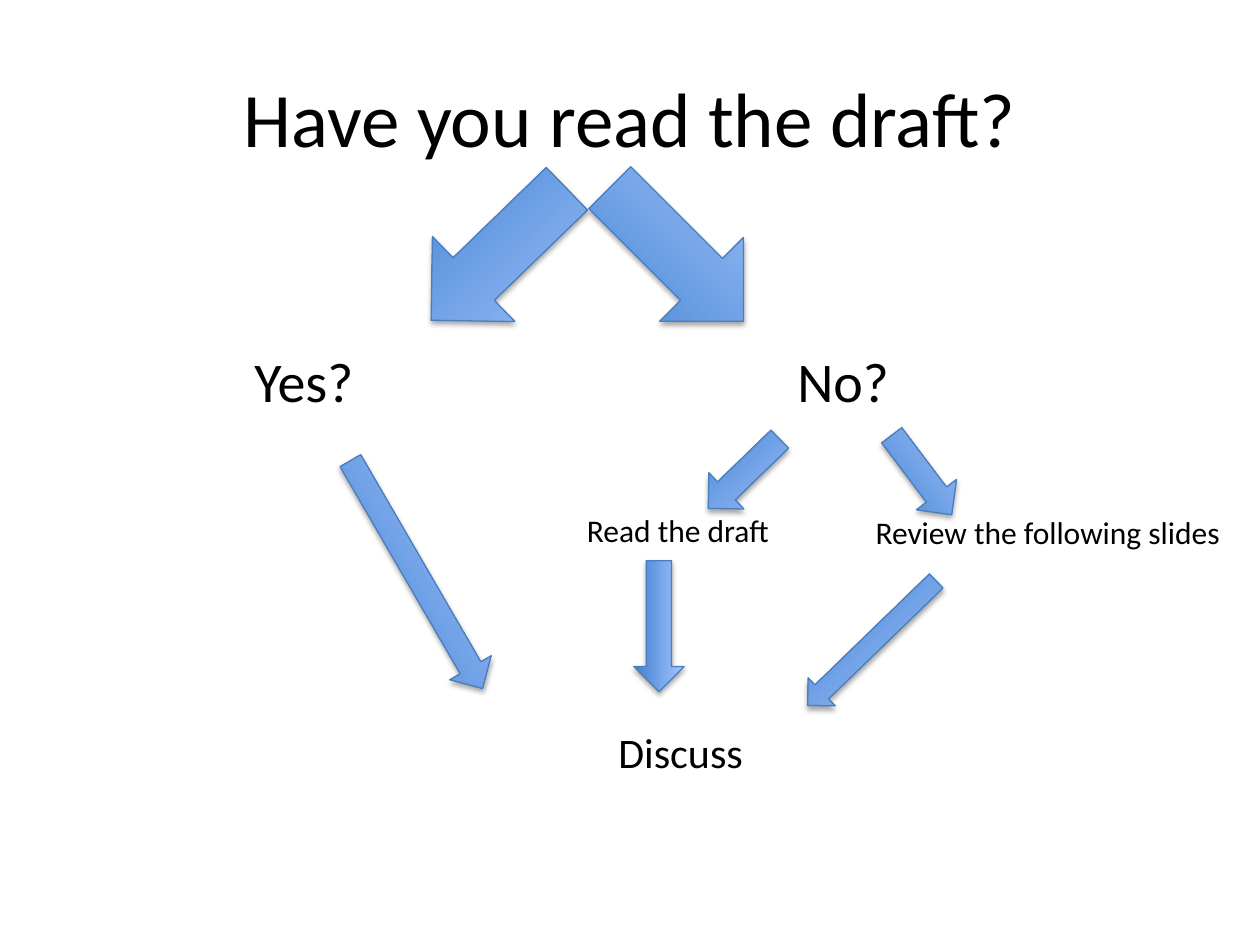
import lxml.etree
import pptx
import pptx.dml.color
import pptx.enum.shapes
import pptx.enum.text
import pptx.oxml
import pptx.oxml.ns
import pptx.util

COLUMNS, ROWS = 100, 75
COLORS = {"text": "000000", "dark": "3F80CE", "light": "A4C4FF",
          "line": "4B7EBC", "shadow": "000000"}
SHADOW = (
    f'<a:effectLst {pptx.oxml.ns.nsdecls("a")}>'
    '<a:outerShdw blurRad="39370" dist="22860" dir="5400000" rotWithShape="0">'
    f'<a:srgbClr val="{COLORS["shadow"]}"><a:alpha val="35000"/></a:srgbClr>'
    '</a:outerShdw></a:effectLst>'
)

prs = pptx.Presentation()
prs.slide_width = pptx.util.Inches(10)
prs.slide_height = pptx.util.Inches(7.5)


def rgb(name):
    """Return the named colour."""
    return pptx.dml.color.RGBColor.from_string(COLORS[name])


def place(box, left, top, width, height):
    """Turn grid units relative to a box into slide lengths."""
    column, row = prs.slide_width / COLUMNS, prs.slide_height / ROWS
    return (round((box[0] + left) * column), round((box[1] + top) * row),
            round(width * column), round(height * row))


def write(tf, text, size=18, align=None, anchor=None, wrap=False):
    """Put one formatted line of text into a frame."""
    tf.word_wrap = wrap
    tf.vertical_anchor = anchor
    p = tf.paragraphs[0]
    p.alignment = align
    r = p.add_run()
    r.text = text
    r.font.name = "Calibri"
    r.font.size = pptx.util.Pt(size)
    r.font.color.rgb = rgb("text")


def label(s, box, at, text, size=18):
    """Add a text box that fits its line."""
    tf = s.shapes.add_textbox(*place(box, *at)).text_frame
    write(tf, text, size=size)
    tf.auto_size = pptx.enum.text.MSO_AUTO_SIZE.SHAPE_TO_FIT_TEXT


def arrow(s, box, at, angle):
    """Add a shaded block arrow turned clockwise by an angle."""
    sp = s.shapes.add_shape(pptx.enum.shapes.MSO_SHAPE.RIGHT_ARROW, *place(box, *at))
    sp.rotation = angle
    sp.fill.gradient()
    sp.fill.gradient_angle = 90
    for stop, name in zip(sp.fill.gradient_stops, ("dark", "light")):
        stop.color.rgb = rgb(name)
    sp.line.color.rgb = rgb("line")
    sp.line.width = pptx.util.Pt(0.75)
    sp._element.spPr.append(pptx.oxml.parse_xml(SHADOW))


def question(s, box):
    """Place the title and the two arrows that lead from it."""
    title = s.shapes.title
    title.left, title.top, title.width, title.height = place(box, 5, 3, 90, 12.5)
    write(title.text_frame, "Have you read the draft?", size=44, wrap=True,
          align=pptx.enum.text.PP_ALIGN.CENTER,
          anchor=pptx.enum.text.MSO_ANCHOR.MIDDLE)
    arrow(s, box, (32.1, 15.5, 15, 9.4), 135.9)
    arrow(s, box, (46.2, 15.5, 15, 9.4), 45)


def yes_branch(s, box):
    """Place the answer yes and its arrow."""
    label(s, box, (0.2, 0, 10.3, 6.4), "Yes?", size=32)
    arrow(s, box, (3.6, 16.7, 20.9, 3.8), 59.9)


def no_branch(s, box):
    """Place the answer no, its two tasks and their arrows."""
    label(s, box, (17.3, 0, 9.4, 6.4), "No?", size=32)
    arrow(s, box, (10.1, 8.6, 7.9, 4), 135.9)
    arrow(s, box, (24.2, 8.7, 7.9, 4), 53)
    label(s, box, (0.6, 13.1, 16.7, 4), "Read the draft")
    label(s, box, (23.5, 13.2, 29.8, 4), "Review the following slides")
    arrow(s, box, (2.1, 20.7, 10.4, 4), 90)
    arrow(s, box, (17.1, 22.5, 14.2, 3.1), 135.9)


def outcome(s, box):
    """Place the step where the branches meet."""
    label(s, box, (0.1, 0.2, 12, 5), "Discuss", size=24)


def main():
    """Build the decision slide and save it."""
    s = prs.slides.add_slide(prs.slide_layouts[5])
    question(s, (0, 0))
    yes_branch(s, (19, 27))
    no_branch(s, (45, 27))
    outcome(s, (48, 57))
    prs.save("out.pptx")


if __name__ == "__main__":
    main()
